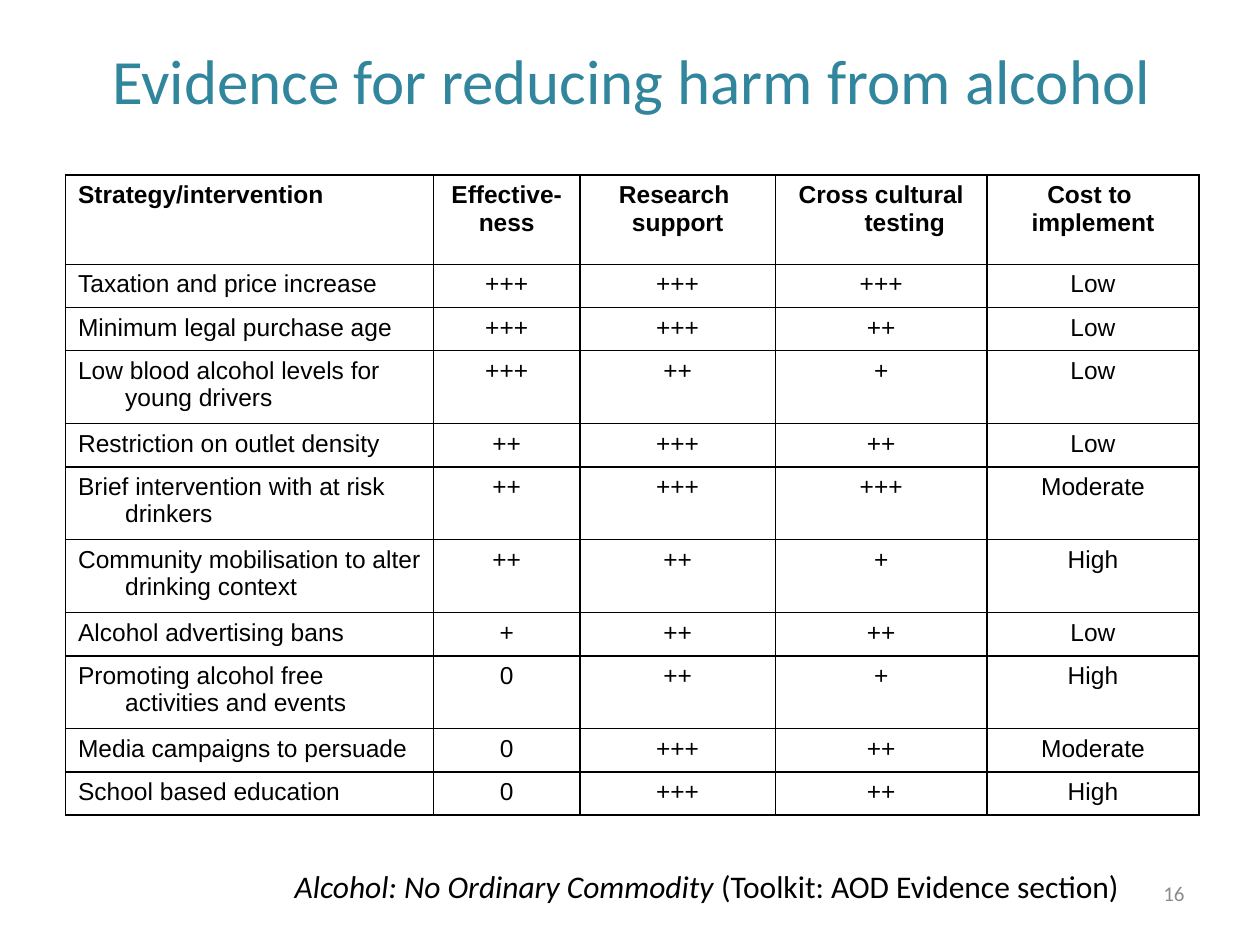
from lxml import etree
from pptx import Presentation
from pptx.dml.color import RGBColor
from pptx.enum.text import MSO_ANCHOR, PP_ALIGN
from pptx.oxml.ns import qn
from pptx.util import Cm, Pt

LEFT, MID, RIGHT, JUST = (PP_ALIGN.LEFT, PP_ALIGN.CENTER,
                          PP_ALIGN.RIGHT, PP_ALIGN.JUSTIFY)
TOP, MIDDLE = MSO_ANCHOR.TOP, MSO_ANCHOR.MIDDLE
COLORS = {"title": "31859C", "text": "000000", "page": "8C8C8C",
          "line": "000000"}
HANG = Cm(0.95)
WIDTHS = [7.42, 2.95, 3.94, 4.27, 4.27]
HEAD, SHORT, TALL = 1.8, 0.87, 1.47
WRAP = 30  # longer strategy names take two lines

# Each inner list holds the paragraphs of a heading
HEADS = [["Strategy/intervention"], ["Effective-", "ness"],
         ["Research ", "support"], ["Cross cultural testing"],
         ["Cost to ", "implement"]]
ROWS = [
    ("Taxation and price increase", "+++", "+++", "+++", "Low"),
    ("Minimum legal purchase age", "+++", "+++", "++", "Low"),
    ("Low blood alcohol levels for young drivers", "+++", "++", "+", "Low"),
    ("Restriction on outlet density", "++", "+++", "++", "Low"),
    ("Brief intervention with at risk drinkers", "++", "+++", "+++",
     "Moderate"),
    ("Community mobilisation to alter drinking context", "++", "++", "+",
     "High"),
    ("Alcohol advertising bans", "+", "++", "++", "Low"),
    ("Promoting alcohol free activities and events", "0", "++", "+", "High"),
    ("Media campaigns to persuade", "0", "+++", "++", "Moderate"),
    ("School based education", "0", "+++", "++", "High"),
]


def add_run(para, text, size, color, font="Calibri", bold=False,
            italic=False):
    run = para.add_run()
    run.text = text
    face = run.font
    face.name, face.size = font, Pt(size)
    face.bold, face.italic = bold, italic
    face.color.rgb = RGBColor.from_string(COLORS[color])


def add_text(slide, box, runs, size, color, align, anchor):
    """Add a text box; runs are pairs of text and italic."""
    frame = slide.shapes.add_textbox(*map(Cm, box)).text_frame
    frame.word_wrap = True
    frame.vertical_anchor = anchor
    para = frame.paragraphs[0]
    para.alignment = align
    for text, italic in runs:
        add_run(para, text, size, color, italic=italic)


def add_edges(cell):
    props = cell._tc.get_or_add_tcPr()
    for side in ("a:lnL", "a:lnR", "a:lnT", "a:lnB"):
        line = etree.SubElement(props, qn(side), w=str(Pt(1)))
        fill = etree.SubElement(line, qn("a:solidFill"))
        etree.SubElement(fill, qn("a:srgbClr"), val=COLORS["line"])


def fill_cell(cell, lines, align, bold):
    add_edges(cell)
    cell.fill.background()
    frame = cell.text_frame
    for i, text in enumerate(lines):
        para = frame.add_paragraph() if i else frame.paragraphs[0]
        para.alignment = align
        props = para._p.get_or_add_pPr()
        props.set("marL", str(HANG))
        props.set("indent", str(-HANG))
        add_run(para, text, 14, "text", "Arial", bold)


def add_grid(slide):
    highs = [HEAD] + [TALL if len(row[0]) > WRAP else SHORT for row in ROWS]
    grid = slide.shapes.add_table(
        len(highs), len(WIDTHS), Cm(1.32), Cm(3.53),
        Cm(sum(WIDTHS)), Cm(sum(highs))).table
    grid.horz_banding = False
    for col, width in zip(grid.columns, WIDTHS):
        col.width = Cm(width)
    for row, high in zip(grid.rows, highs):
        row.height = Cm(high)
    # Headings
    for c, lines in enumerate(HEADS):
        fill_cell(grid.cell(0, c), lines, MID if c else JUST, True)
    # Strategies and their ratings
    for r, row in enumerate(ROWS, 1):
        for c, text in enumerate(row):
            fill_cell(grid.cell(r, c), [text], MID if c else LEFT, False)


def main():
    deck = Presentation()
    deck.slide_width, deck.slide_height = Cm(25.4), Cm(19.05)
    slide = deck.slides.add_slide(deck.slide_layouts[6])

    # Title
    add_text(slide, (1.3, 0, 22.86, 3.18),
             [("Evidence for reducing harm from alcohol", False)],
             36, "title", MID, MIDDLE)
    # Evidence table
    add_grid(slide)
    # Page number and citation
    add_text(slide, (18.2, 17.35, 5.93, 1.32), [("16", False)],
             12, "page", RIGHT, MIDDLE)
    add_text(slide, (5.69, 17.35, 17.3, 1.02),
             [("Alcohol: No Ordinary Commodity ", True),
              ("(Toolkit: AOD Evidence section)", False)],
             18, "text", LEFT, TOP)
    deck.save("out.pptx")


if __name__ == "__main__":
    main()
